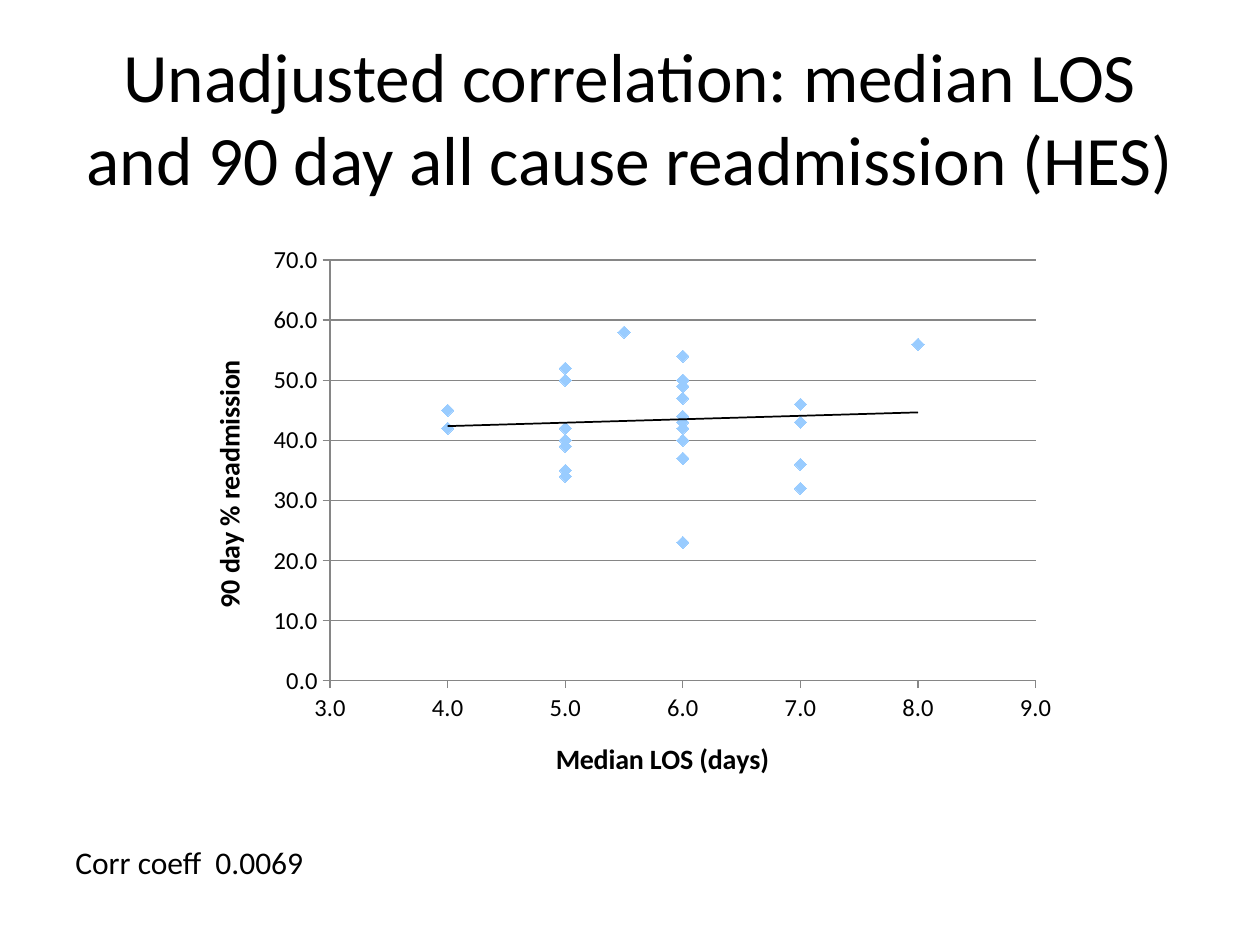
from lxml.etree import fromstring
from pptx import Presentation
from pptx.chart.data import XyChartData
from pptx.dml.color import RGBColor
from pptx.enum.chart import XL_CHART_TYPE, XL_MARKER_STYLE, XL_TICK_MARK
from pptx.enum.text import MSO_ANCHOR, PP_ALIGN
from pptx.util import Cm, Pt

BLACK = RGBColor(0, 0, 0)
GREY = RGBColor(0x86, 0x86, 0x86)
BLUE = RGBColor(0x99, 0xCC, 0xFF)
FONT = "Calibri"

TITLE = "Unadjusted correlation: median LOS and 90 day all cause readmission (HES)"
NOTE = "Corr coeff  0.0069"
DAYS = [6, 5, 6, 5, 5, 5, 5.5, 4, 5, 6, 6, 6, 7, 8,
        6, 6, 4, 6, 6, 7, 6, 5, 5, 7, 6, 6, 6, 7]
RATES = [23, 40, 47, 34, 35, 50, 58, 45, 42, 44, 40, 54, 32, 56,
         37, 43, 42, 42, 50, 43, 49, 39, 52, 46, 50, 37, 49, 36]
X_AXIS = dict(minimum_scale=3, maximum_scale=9, major_unit=1,
              has_major_gridlines=False)
Y_AXIS = dict(minimum_scale=0, maximum_scale=70, major_unit=10,
              has_major_gridlines=True)
PLOT = dict(x=0.16, y=0.05, w=0.8, h=0.74)
NS = ('xmlns:c="http://schemas.openxmlformats.org/drawingml/2006/chart" '
      'xmlns:a="http://schemas.openxmlformats.org/drawingml/2006/main"')
TREND = f"""<c:trendline {NS}><c:spPr><a:ln w="12700"><a:solidFill>
<a:srgbClr val="{BLACK}"/></a:solidFill></a:ln></c:spPr>
<c:trendlineType val="linear"/><c:dispRSqr val="0"/><c:dispEq val="0"/>
</c:trendline>"""


def set_all(item, values):
    for name, value in values.items():
        setattr(item, name, value)


def style(font, size, bold=False):
    set_all(font, dict(name=FONT, size=Pt(size), bold=bold))
    font.color.rgb = BLACK


def draw(line, width=0.75):
    line.color.rgb = GREY
    line.width = Pt(width)


def add_text(slide, text, box, size, align, anchor, wrap):
    frame = slide.shapes.add_textbox(*map(Cm, box)).text_frame
    set_all(frame, dict(word_wrap=wrap, vertical_anchor=anchor))
    para = frame.paragraphs[0]
    para.alignment = align
    run = para.add_run()
    run.text = text
    style(run.font, size)


def set_axis(axis, title, values):
    set_all(axis, values)
    set_all(axis, dict(major_tick_mark=XL_TICK_MARK.OUTSIDE,
                       minor_tick_mark=XL_TICK_MARK.NONE))
    set_all(axis.tick_labels, dict(number_format="0.0",
                                   number_format_is_linked=False))
    style(axis.tick_labels.font, 14)
    draw(axis.format.line)
    if axis.has_major_gridlines:
        draw(axis.major_gridlines.format.line)
    run = axis.axis_title.text_frame.paragraphs[0].add_run()
    run.text = title
    style(run.font, 16, True)


def fix_plot(chart):
    """Pin the inner plot area to fractions of the chart."""
    modes = "".join(f'<c:{k}Mode val="edge"/>' for k in "xy")
    sizes = "".join(f'<c:{k} val="{v}"/>' for k, v in PLOT.items())
    area = chart._chartSpace.chart.plotArea
    for old in area.findall("{*}layout"):
        area.remove(old)
    area.insert(0, fromstring(
        f'<c:layout {NS}><c:manualLayout><c:layoutTarget val="inner"/>'
        f"{modes}{sizes}</c:manualLayout></c:layout>"))


def add_scatter(slide, box):
    data = XyChartData()
    points = data.add_series("Series 1")
    for day, rate in zip(DAYS, RATES):
        points.add_data_point(day, rate)
    chart = slide.shapes.add_chart(
        XL_CHART_TYPE.XY_SCATTER, *map(Cm, box), data).chart
    set_all(chart, dict(has_legend=False, has_title=False))
    style(chart.font, 10)
    set_axis(chart.category_axis, "Median LOS (days)", X_AXIS)
    set_axis(chart.value_axis, "90 day % readmission", Y_AXIS)
    turn = chart.value_axis.axis_title.text_frame._txBody.bodyPr
    turn.set("rot", "-5400000")
    turn.set("vert", "horz")
    fix_plot(chart)

    plot = chart.plots[0]
    plot.vary_by_categories = False
    dots = plot.series[0]
    dots.format.line.fill.background()
    set_all(dots.marker, dict(style=XL_MARKER_STYLE.DIAMOND, size=7))
    look = dots.marker.format
    look.fill.solid()
    look.fill.fore_color.rgb = BLUE
    look.line.fill.background()
    dots._element.find("{*}xVal").addprevious(fromstring(TREND))


def main():
    deck = Presentation()
    set_all(deck, dict(slide_width=Cm(25.4), slide_height=Cm(19.05)))
    slide = deck.slides.add_slide(deck.slide_layouts[6])
    add_text(slide, TITLE, (1.27, 0.76, 22.86, 3.18), 39.6,
             PP_ALIGN.CENTER, MSO_ANCHOR.MIDDLE, True)
    add_scatter(slide, (3.81, 4.67, 17.78, 11.46))
    add_text(slide, NOTE, (1.27, 16.87, 5.16, 1.02), 18,
             PP_ALIGN.LEFT, MSO_ANCHOR.TOP, False)
    deck.save("out.pptx")


if __name__ == "__main__":
    main()
